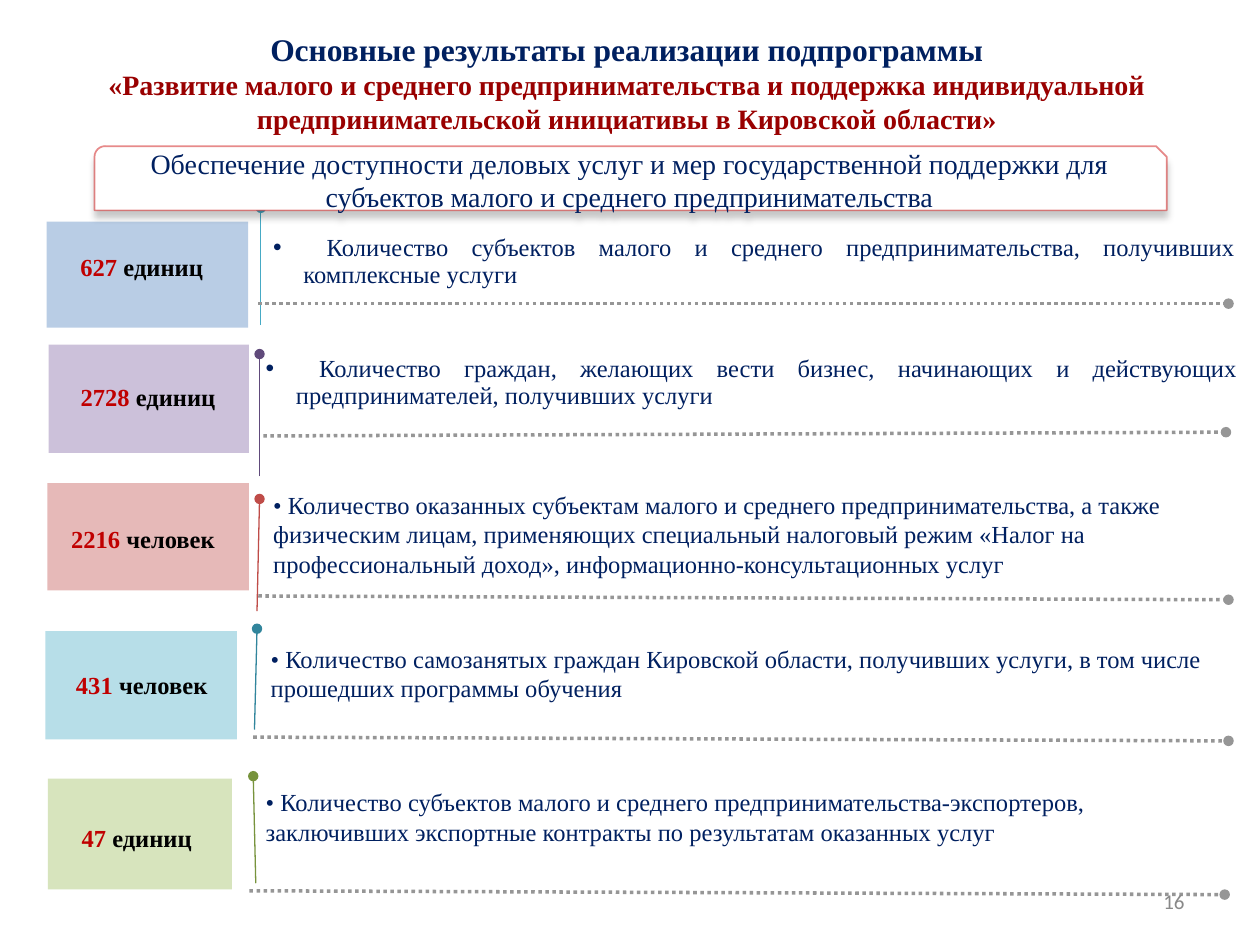
from lxml import etree
from pptx import Presentation
from pptx.dml.color import RGBColor
from pptx.enum.dml import MSO_LINE
from pptx.enum.shapes import MSO_CONNECTOR, MSO_SHAPE
from pptx.enum.text import MSO_ANCHOR, MSO_AUTO_SIZE, PP_ALIGN
from pptx.oxml.ns import qn
from pptx.util import Inches, Pt

COLORS = {
    "navy": "002060", "crimson": "990000", "red": "C00000", "black": "000000",
    "white": "FFFFFF", "dots": "969696", "border": "CC0000", "number": "898989",
}
SERIF = "Times New Roman"


def add_span(para, text, size, color, bold=False, font=SERIF):
    span = para.add_run()
    span.text = text
    span.font.name = font
    span.font.size = Pt(size)
    span.font.bold = bold
    span.font.color.rgb = RGBColor.from_string(COLORS[color])


def add_pin(page, start, end, color, width, dash=None):
    """Line with a round dot at its end."""
    line = page.shapes.add_connector(
        MSO_CONNECTOR.STRAIGHT, *[Inches(v) for v in (*start, *end)])
    line.line.color.rgb = RGBColor.from_string(color)
    line.line.width = Pt(width)
    if dash:
        line.line.dash_style = dash
    etree.SubElement(line.line._get_or_add_ln(), qn("a:tailEnd"), type="oval")
    etree.SubElement(line._element.spPr, qn("a:effectLst"))


deck = Presentation()
deck.slide_width, deck.slide_height = Inches(10), Inches(7.5)
page = deck.slides.add_slide(deck.slide_layouts[5])

# Title
title = page.shapes.title
title.left, title.top = Inches(0.03), Inches(0.26)
title.width, title.height = Inches(9.89), Inches(0.79)
title.text_frame.auto_size = MSO_AUTO_SIZE.NONE
title.text_frame.vertical_anchor = MSO_ANCHOR.MIDDLE
para = title.text_frame.paragraphs[0]
para.alignment = PP_ALIGN.CENTER
add_span(para, "Основные результаты реализации подпрограммы", 18, "navy", True)
para.add_line_break()
add_span(para, "«Развитие малого и среднего предпринимательства и поддержка индивидуальной "
         "предпринимательской инициативы в Кировской области»", 16, "crimson", True)

# Result rows: tile, value, description, vertical pin, dotted underline
rows = [
    dict(tile=(0.75, 1.38, 0.84, 1.6), fill="B9CDE5",
         value=("627 ", "единиц"), value_at=(0.53, 1.95, 1.19), wrap=False,
         text=" Количество субъектов малого и среднего предпринимательства, "
              "получивших комплексные услуги",
         text_at=(2.07, 1.82, 7.83, 0.52), bullet=True,
         pin=((2.07, 2.58), (2.07, 1.65)), pin_color="46AAC5",
         rule=((2.05, 2.41), (9.75, 2.41))),
    dict(tile=(0.75, 2.37, 0.86, 1.59), fill="CCC1DA",
         value=("2728 ", "единиц"), value_at=(0.51, 2.98, 1.33), wrap=False,
         text=" Количество граждан, желающих вести бизнес, начинающих и действующих "
              "предпринимателей, получивших услуги",
         text_at=(2.01, 2.78, 7.91, 0.52), bullet=True,
         pin=((2.06, 3.78), (2.06, 2.81)), pin_color="604A7B",
         rule=((2.09, 3.46), (9.73, 3.43))),
    dict(tile=(0.75, 3.46, 0.85, 1.6), fill="E6B9B8",
         value=("2216 ", "человек"), value_at=(0.46, 4.11, 1.35), wrap=False,
         text="• Количество оказанных субъектам малого и среднего предпринимательства, "
              "а также физическим лицам, применяющих специальный налоговый режим «Налог на "
              "профессиональный доход», информационно-консультационных услуг",
         text_at=(2.07, 3.84, 7.73, 0.81), bullet=False,
         pin=((2.04, 4.85), (2.06, 3.96)), pin_color="BF4C48",
         rule=((2.05, 4.73), (9.75, 4.76))),
    dict(tile=(0.69, 4.68, 0.86, 1.52), fill="B7DEE8",
         value=("431 ", "человек"), value_at=(0.5, 5.27, 1.25), wrap=False,
         text="• Количество самозанятых граждан Кировской области, получивших услуги, "
              "в том числе прошедших программы обучения",
         text_at=(2.05, 5.06, 7.84, 0.57), bullet=False,
         pin=((2.02, 5.79), (2.04, 4.99)), pin_color="31859C",
         rule=((2.01, 5.85), (9.75, 5.88))),
    dict(tile=(0.67, 5.89, 0.88, 1.46), fill="D7E4BD",
         value=("47 ", "единиц"), value_at=(0.21, 6.48, 1.75), wrap=True,
         text="• Количество субъектов малого и среднего предпринимательства-экспортеров, "
              "заключивших экспортные контракты по результатам оказанных услуг",
         text_at=(2.01, 6.2, 7.83, 0.81), bullet=False,
         pin=((2.03, 7.01), (2.01, 6.16)), pin_color="77933C",
         rule=((1.98, 7.07), (9.72, 7.1))),
]
for row in rows:
    tile = page.shapes.add_shape(MSO_SHAPE.RECTANGLE, *[Inches(v) for v in row["tile"]])
    tile.rotation = 90
    tile.shadow.inherit = False
    tile.fill.solid()
    tile.fill.fore_color.rgb = RGBColor.from_string(row["fill"])
    tile.line.fill.background()

    value = page.shapes.add_textbox(*[Inches(v) for v in (*row["value_at"], 0.34)])
    value.text_frame.word_wrap = row["wrap"]
    para = value.text_frame.paragraphs[0]
    para.alignment = PP_ALIGN.CENTER
    amount, unit = row["value"]
    add_span(para, amount, 14, "red", True)
    add_span(para, unit, 14, "black", True)

    box = page.shapes.add_textbox(*[Inches(v) for v in row["text_at"]])
    box.text_frame.word_wrap = True
    para = box.text_frame.paragraphs[0]
    add_span(para, row["text"], 14, "navy")
    if row["bullet"]:
        para.alignment = PP_ALIGN.JUSTIFY
        para.line_spacing = Pt(15)
        props = para._p.get_or_add_pPr()
        props.set("marL", str(Inches(0.24)))
        props.set("indent", str(-Inches(0.24)))
        etree.SubElement(props, qn("a:buFont"), typeface="Arial")
        etree.SubElement(props, qn("a:buChar"), char="•")

    add_pin(page, *row["pin"], row["pin_color"], 0.75)
    add_pin(page, *row["rule"], COLORS["dots"], 2, MSO_LINE.ROUND_DOT)

# Goal banner with a translucent border and a soft shadow
banner = page.shapes.add_shape(MSO_SHAPE.SNIP_ROUND_RECTANGLE, Inches(0.75), Inches(1.16),
                               Inches(8.51), Inches(0.51))
banner.fill.solid()
banner.fill.fore_color.rgb = RGBColor.from_string(COLORS["white"])
banner.line.color.rgb = RGBColor.from_string(COLORS["border"])
banner.line.width = Pt(1)
border = banner.line._get_or_add_ln().find(".//" + qn("a:srgbClr"))
etree.SubElement(border, qn("a:alpha"), val="46000")
effects = etree.SubElement(banner._element.spPr, qn("a:effectLst"))
shadow = etree.SubElement(effects, qn("a:outerShdw"), blurRad=str(Pt(4)), dist=str(Pt(4)),
                          dir="5400000", algn="t", rotWithShape="0")
shade = etree.SubElement(shadow, qn("a:srgbClr"), val=COLORS["black"])
etree.SubElement(shade, qn("a:alpha"), val="21000")
banner.text_frame.word_wrap = True
banner.text_frame.vertical_anchor = MSO_ANCHOR.MIDDLE
para = banner.text_frame.paragraphs[0]
para.alignment = PP_ALIGN.CENTER
add_span(para, "Обеспечение доступности деловых услуг и мер государственной поддержки для "
         "субъектов малого и среднего предпринимательства", 16, "navy")

# Page number
number = page.shapes.add_textbox(Inches(7.17), Inches(6.95), Inches(2.33), Inches(0.4))
number.text_frame.word_wrap = True
number.text_frame.vertical_anchor = MSO_ANCHOR.MIDDLE
para = number.text_frame.paragraphs[0]
para.alignment = PP_ALIGN.RIGHT
add_span(para, "16", 12, "number", font="Calibri")

deck.save("out.pptx")
